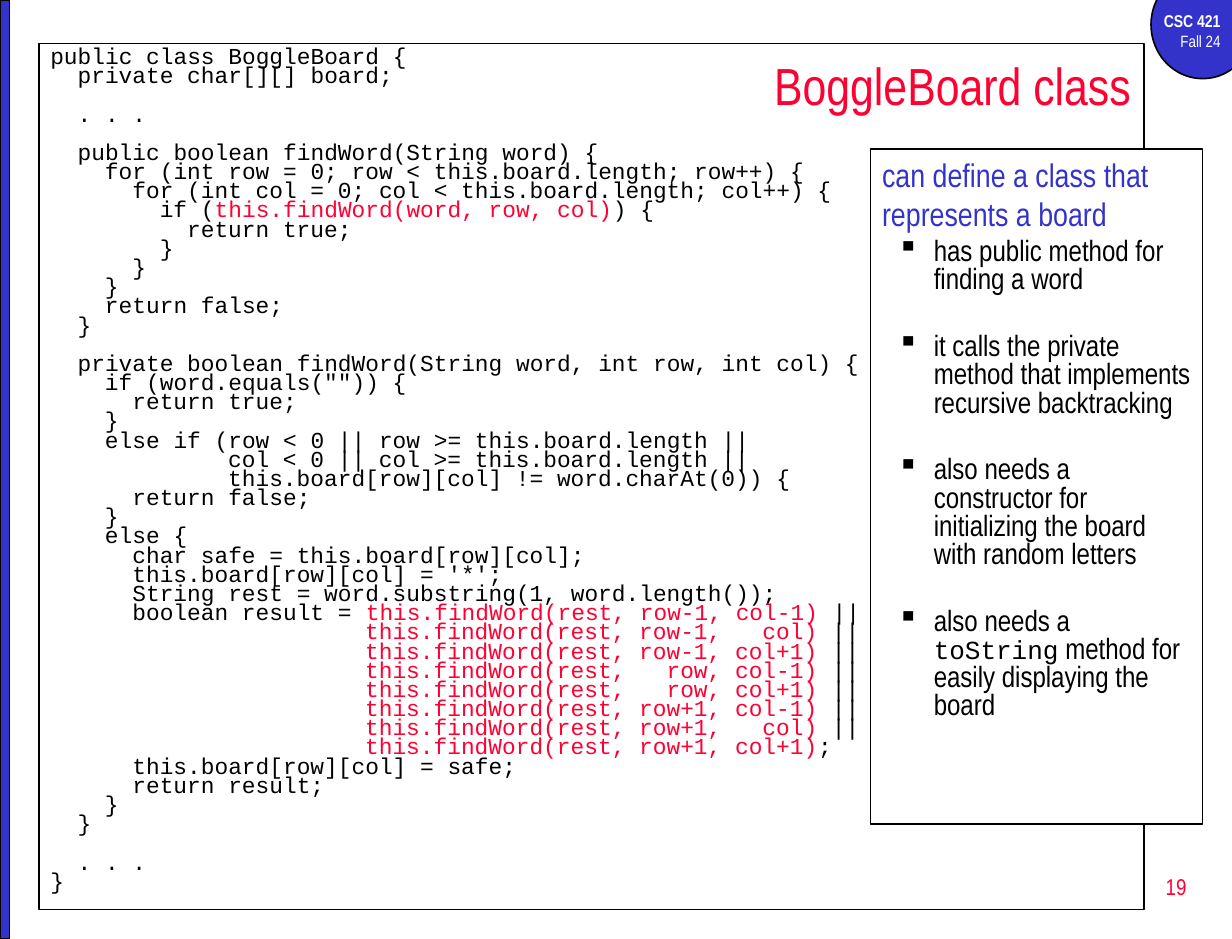
"""Build the BoggleBoard class slide: a code listing with explanatory notes."""
from dataclasses import dataclass
from itertools import product

from lxml.etree import SubElement
from pptx import Presentation
from pptx.dml.color import RGBColor
from pptx.enum.shapes import MSO_SHAPE
from pptx.enum.text import MSO_ANCHOR, PP_ALIGN
from pptx.oxml.ns import qn
from pptx.util import Inches, Pt


@dataclass(frozen=True)
class Theme:
    blue: RGBColor = RGBColor(0x33, 0x33, 0xCC)
    red: RGBColor = RGBColor(0xFF, 0x00, 0x33)
    black: RGBColor = RGBColor(0x00, 0x00, 0x00)
    white: RGBColor = RGBColor(0xFF, 0xFF, 0xFF)
    sans: str = "Arial Narrow"
    mono: str = "Courier New"
    title: Pt = Pt(32)
    heading: Pt = Pt(20)
    bullet: Pt = Pt(18)
    inline_code: Pt = Pt(16)
    code: Pt = Pt(14)
    course: Pt = Pt(10.5)
    term: Pt = Pt(10)


theme = Theme()
presentation = Presentation()
presentation.slide_width, presentation.slide_height = Inches(10.5), Inches(8)
slide = presentation.slides.add_slide(presentation.slide_layouts[6])


def add_box(kind, left, top, width, height, fill=None, line_width=1):
    box = (left, top, width, height)
    if kind is None:
        shape = slide.shapes.add_textbox(*map(Inches, box))
    else:
        shape = slide.shapes.add_shape(kind, *map(Inches, box))
        shape.shadow.inherit = False
        shape.line.color.rgb = theme.black
        shape.line.width = Pt(line_width)
        if fill is None:
            shape.fill.background()
        else:
            shape.fill.solid()
            shape.fill.fore_color.rgb = fill
    shape.text_frame.word_wrap = True
    shape.text_frame.vertical_anchor = MSO_ANCHOR.TOP
    return shape


def add_paragraph(frame, text, size, color, name=theme.sans, align=PP_ALIGN.LEFT, accent=None):
    paragraph = frame.paragraphs[0]
    if paragraph.runs:
        paragraph = frame.add_paragraph()
    paragraph.alignment = align
    paragraph.font.size, paragraph.font.name = size, name
    paragraph.font.color.rgb = color
    for index, part in enumerate(text.split("§")):
        if part:
            run = paragraph.add_run()
            run.text = part
            if index % 2:
                run.font.name, run.font.size, run.font.color.rgb = accent
    return paragraph


add_box(MSO_SHAPE.OVAL, 9.81, -0.25, 0.88, 0.92, theme.blue)
course = add_box(None, 9.67, 0.04, 0.83, 0.46).text_frame
add_paragraph(course, "CSC 421", theme.course, theme.white, align=PP_ALIGN.RIGHT).font.bold = True
add_paragraph(course, "Fall 24", theme.term, theme.white, align=PP_ALIGN.RIGHT)
add_box(MSO_SHAPE.RECTANGLE, 0, 0, 0.08, 8, theme.blue)

number = add_box(None, 8.02, 7.29, 2.19, 0.53).text_frame
number.vertical_anchor = MSO_ANCHOR.MIDDLE
add_paragraph(number, "19", theme.code, theme.red, align=PP_ALIGN.RIGHT)

title = add_box(None, 6.5, 0.35, 3.33, 0.75).text_frame
title.vertical_anchor = MSO_ANCHOR.MIDDLE
add_paragraph(title, "BoggleBoard class", theme.title, theme.red)

neighbours = [pair for pair in product(("row-1", "row", "row+1"), ("col-1", "col", "col+1"))
              if pair != ("row", "col")]
calls = (" ||\n" + " " * 23).join(
    f"§this.findWord(rest, {row:>5}, {col:>5})§" for row, col in neighbours)

opening = """public class BoggleBoard {
  private char[][] board;

  . . .

"""
public_method = """  public boolean findWord(String word) {
    for (int row = 0; row < this.board.length; row++) {
      for (int col = 0; col < this.board.length; col++) {
        if (§this.findWord(word, row, col)§) {
          return true;
        }
      }
    }
    return false;
  }

"""
base_cases = """  private boolean findWord(String word, int row, int col) {
    if (word.equals("")) {
      return true;
    }
    else if (row < 0 || row >= this.board.length ||
             col < 0 || col >= this.board.length ||
             this.board[row][col] != word.charAt(0)) {
      return false;
    }
"""
recursive_case = """    else {
      char safe = this.board[row][col];
      this.board[row][col] = '*';
      String rest = word.substring(1, word.length());
      boolean result = CALLS;
      this.board[row][col] = safe;
      return result;
    }
  }

  . . .
}""".replace("CALLS", calls)

code = add_box(MSO_SHAPE.RECTANGLE, 0.33, 0.37, 9.42, 7.38).text_frame
character_width = Pt(8.4)
blank_line = Pt(11.75)
gap = Pt(0)
for line in (opening + public_method + base_cases + recursive_case).split("\n"):
    if not line:
        gap = blank_line
        continue
    text = line.lstrip()
    paragraph = add_paragraph(code, text, theme.code, theme.black, theme.mono,
                              accent=(theme.mono, theme.code, theme.red))
    paragraph.line_spacing = 0.7
    paragraph.space_before, gap = gap, Pt(0)
    properties = paragraph._p.get_or_add_pPr()
    properties.set("marL", str((len(line) - len(text)) * character_width))
    properties.set("indent", "0")

notes = add_box(MSO_SHAPE.RECTANGLE, 7.42, 1.27, 2.83, 5.75, theme.white, 0.75).text_frame
heading = add_paragraph(notes, "can define a class that represents a board", theme.heading, theme.blue)
heading.space_before = Pt(4)
bullets = [
    "has public method for finding a word",
    "it calls the private method that implements recursive backtracking",
    "also needs a constructor for initializing the board with random letters",
    "also needs a §toString§ method for easily displaying the board",
]
for index, text in enumerate(bullets):
    paragraph = add_paragraph(notes, text, theme.bullet, theme.black,
                              accent=(theme.mono, theme.inline_code, theme.black))
    paragraph.level = 1
    paragraph.line_spacing = 0.8
    paragraph.space_before = Pt(23.75) if index else Pt(3.6)
    properties = paragraph._p.get_or_add_pPr()
    properties.set("marL", str(Inches(0.44)))
    properties.set("indent", str(Inches(-0.31)))
    bullet = SubElement(properties, qn("a:buChar"), char="▪")
    properties.find(qn("a:defRPr")).addprevious(bullet)

presentation.save("out.pptx")
